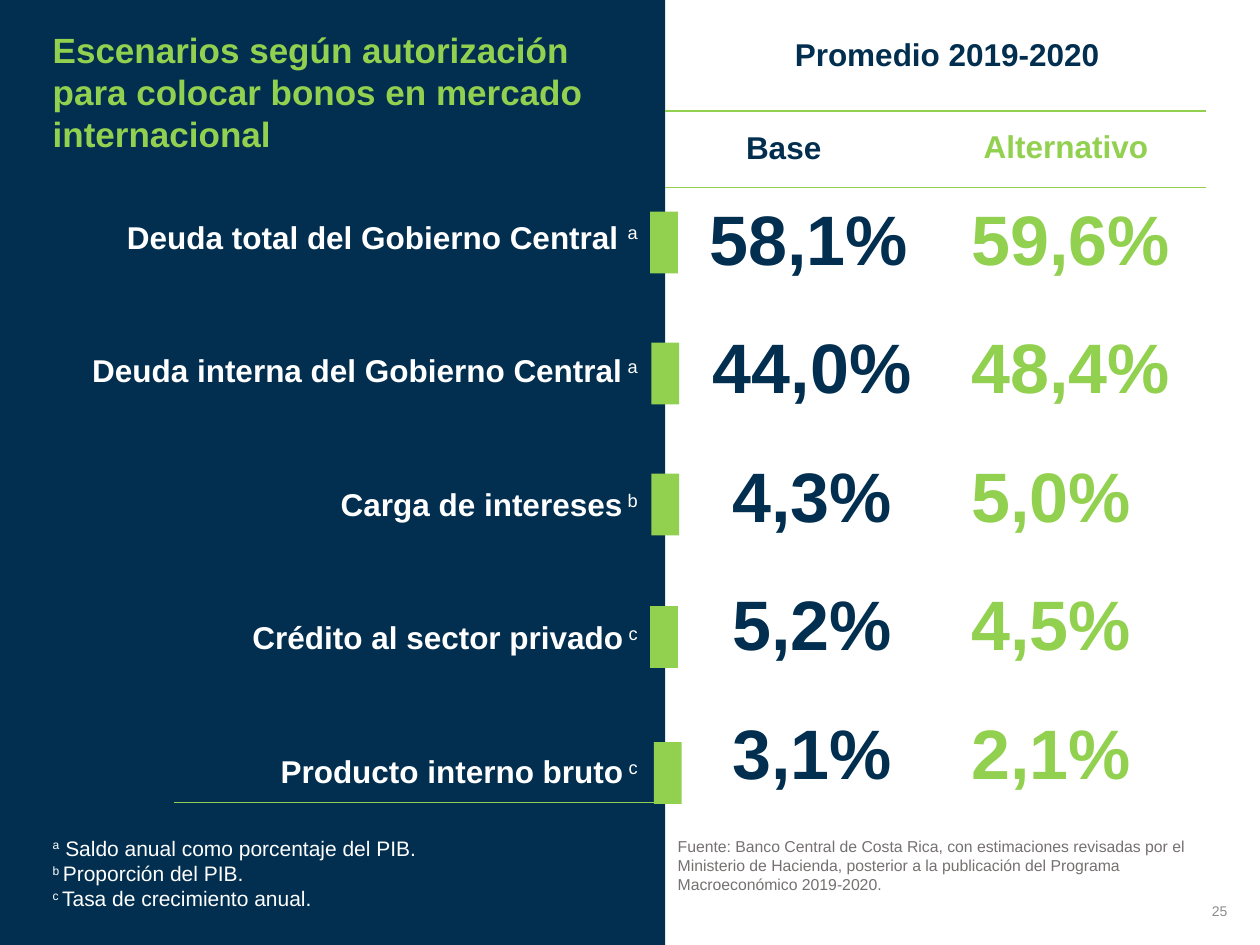
"""Build the slide comparing debt scenarios under bond placement authorization."""
from lxml import etree
from pptx import Presentation
from pptx.dml.color import RGBColor
from pptx.enum.shapes import MSO_CONNECTOR, MSO_SHAPE
from pptx.enum.text import MSO_ANCHOR, PP_ALIGN
from pptx.oxml.ns import qn
from pptx.util import Inches, Pt

LEFT, CENTER, RIGHT = PP_ALIGN.LEFT, PP_ALIGN.CENTER, PP_ALIGN.RIGHT
TOP, MIDDLE = MSO_ANCHOR.TOP, MSO_ANCHOR.MIDDLE
RECTANGLE, STRAIGHT = MSO_SHAPE.RECTANGLE, MSO_CONNECTOR.STRAIGHT

NAVY, GREEN, WHITE, GRAY, PALE_GRAY = "022F4F", "92D050", "FFFFFF", "767171", "8C8C8C"
PANEL_WIDTH = 5.28

TITLE = "Escenarios según autorización para colocar bonos en mercado internacional"
HEADINGS = [
    ("Promedio 2019-2020", (6.21, 0.23, 2.64, 0.4), NAVY, LEFT),
    ("Base", (5.74, 0.97, 0.96, 0.4), NAVY, CENTER),
    ("Alternativo", (7.66, 0.96, 1.6, 0.4), GREEN, CENTER),
]
INDICATORS = [
    ("Deuda total del Gobierno Central ", "a", "58,1%", "59,6%"),
    ("Deuda interna del Gobierno Central", " a", "44,0%", "48,4%"),
    ("Carga de intereses", " b", "4,3%", "5,0%"),
    ("Crédito al sector privado", " c", "5,2%", "4,5%"),
    ("Producto interno bruto", " c", "3,1%", "2,1%"),
]
MARKERS = [(5.16, 1.68), (5.17, 2.72), (5.17, 3.76), (5.16, 4.81), (5.19, 5.89)]
NOTES = [
    ("a", " Saldo anual como porcentaje del PIB."),
    ("b ", "Proporción del PIB."),
    ("c ", "Tasa de crecimiento anual."),
]
SOURCE = [
    "Fuente: Banco Central de Costa Rica, con estimaciones revisadas por el "
    "Ministerio de Hacienda, posterior a la publicación del Programa",
    "Macroeconómico 2019-2020.",
]
RULES = [(1.38, 6.37, 5.28, 0.5), (5.28, 1.49, 9.57, 0.75), (5.28, 0.88, 9.57, 0.75)]


def color(value):
    return RGBColor.from_string(value)


def add_text(slide, box, paragraphs, size, fill, bold=False, align=LEFT, anchor=TOP, wrap=True):
    """Add paragraphs, each a list of (text, is_superscript) runs."""
    frame = slide.shapes.add_textbox(*map(Inches, box)).text_frame
    frame.word_wrap, frame.vertical_anchor = wrap, anchor
    for index, runs in enumerate(paragraphs):
        paragraph = frame.add_paragraph() if index else frame.paragraphs[0]
        paragraph.alignment = align
        for text, raised in runs:
            run = paragraph.add_run()
            run.text = text
            formats = {"name": "Arial", "size": Pt(size), "bold": bold and not raised}
            for name, value in formats.items():
                setattr(run.font, name, value)
            run.font.color.rgb = color(fill)
            if raised:
                run._r.get_or_add_rPr().set("baseline", "30000")


def add_block(slide, box, fill):
    """Add a plain rectangle."""
    block = slide.shapes.add_shape(RECTANGLE, *map(Inches, box))
    block.shadow.inherit = False
    block.fill.solid()
    block.fill.fore_color.rgb = color(fill)
    block.line.fill.background()


def add_rule(slide, left, top, right, weight):
    """Add a horizontal green rule."""
    ends = map(Inches, (left, top, right, top))
    rule = slide.shapes.add_connector(STRAIGHT, *ends)
    rule.line.color.rgb = color(GREEN)
    rule.line.width = Pt(weight)
    etree.SubElement(rule._element.spPr, qn("a:effectLst"))


def main():
    """Assemble and save the slide."""
    deck = Presentation()
    deck.slide_width, deck.slide_height = Inches(10), Inches(7.5)
    slide = deck.slides.add_slide(deck.slide_layouts[6])

    add_block(slide, (0, 0, PANEL_WIDTH, 7.5), NAVY)
    add_text(slide, (0.32, 0.18, 4.77, 1.11), [[(TITLE, False)]], 20, GREEN, True)
    for heading, box, fill, align in HEADINGS:
        add_text(slide, box, [[(heading, False)]], 18, fill, True, align, wrap=False)

    for row, (label, mark, base, alternative) in enumerate(INDICATORS):
        label_top, value_top = 1.68 + 1.06 * row, 1.5 + 1.02 * row
        add_text(slide, (0.36, label_top, 4.8, 0.4), [[(label, False), (mark, True)]],
                 18, WHITE, True, RIGHT)
        base_width = 1.99 if row else 1.94
        add_text(slide, (5.45, value_top, base_width, 0.77), [[(base, False)]],
                 40, NAVY, True, CENTER)
        add_text(slide, (7.61, value_top, 1.79, 0.77), [[(alternative, False)]],
                 40, GREEN, True, wrap=False)
    for left, top in MARKERS:
        add_block(slide, (left, top, 0.22, 0.49), GREEN)

    add_text(slide, (5.28, 6.59, 4.72, 0.56), [[(line, False)] for line in SOURCE], 9, GRAY)
    add_text(slide, (0.32, 6.58, 3.77, 0.71),
             [[(mark, True), (note, False)] for mark, note in NOTES], 12, WHITE)
    add_text(slide, (7.06, 7.03, 2.78, 0.4), [[("25", False)]], 8, PALE_GRAY,
             align=RIGHT, anchor=MIDDLE)
    for rule in RULES:
        add_rule(slide, *rule)

    deck.save("out.pptx")


if __name__ == "__main__":
    main()
